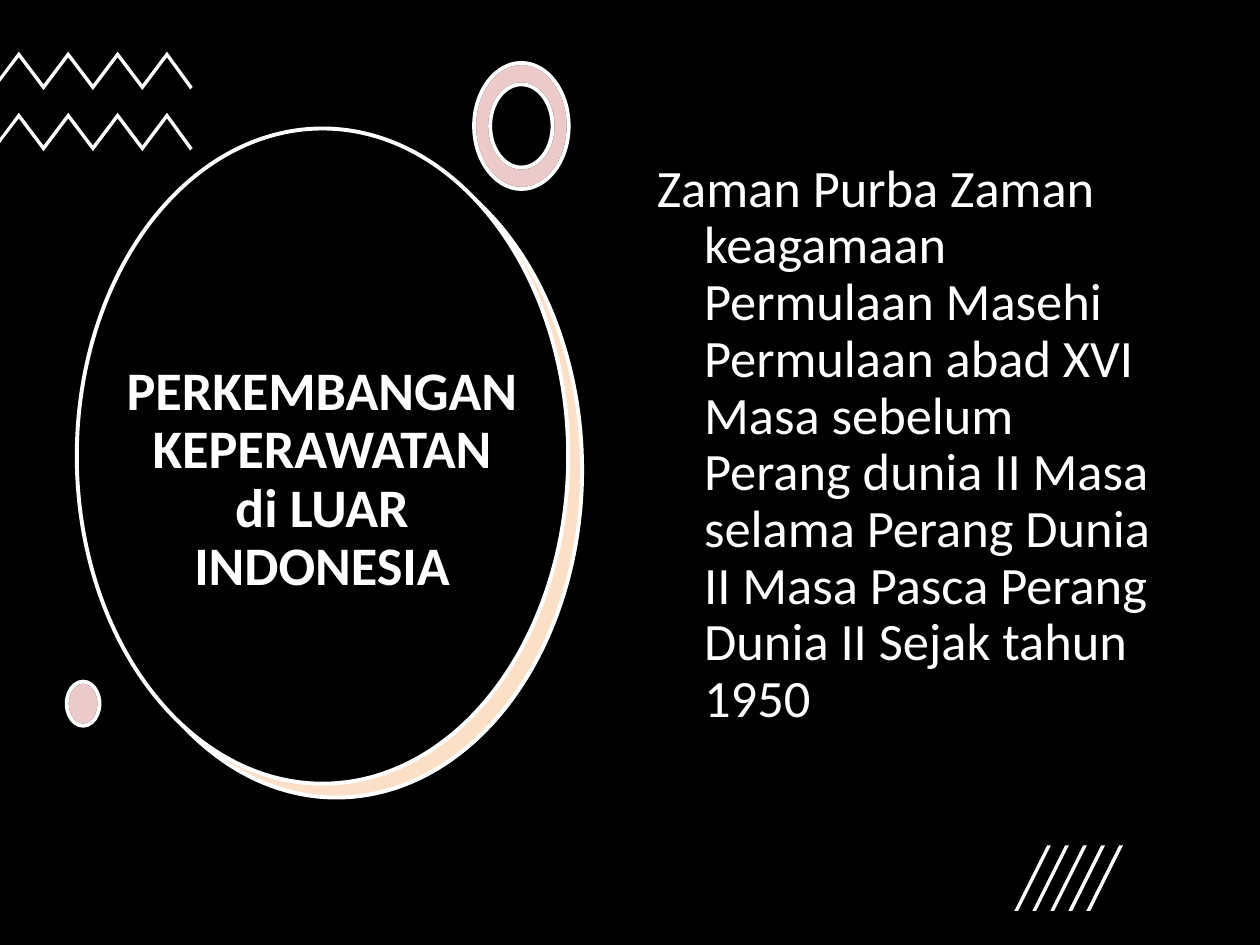
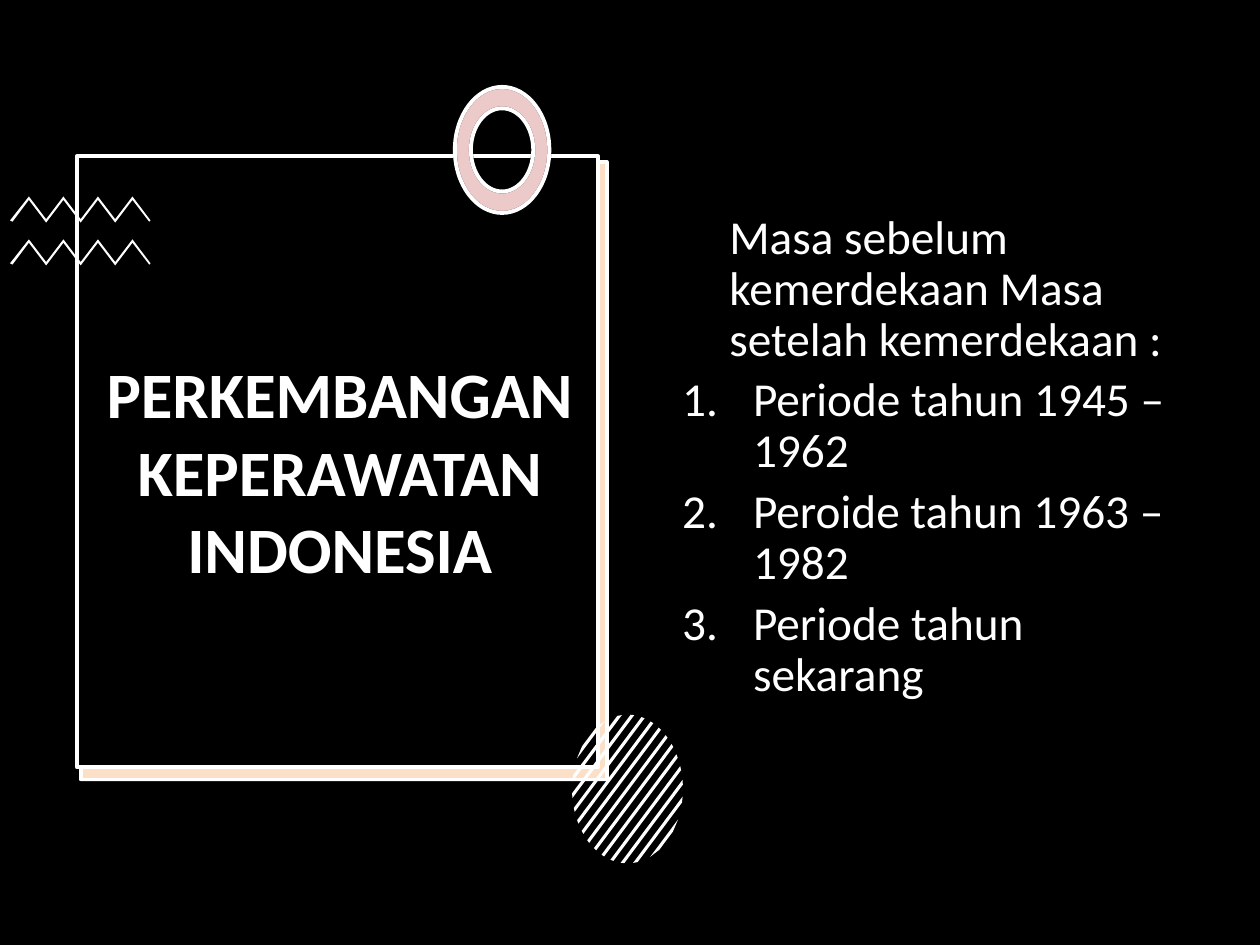
import math
from dataclasses import dataclass

import lxml.etree
import pptx
import pptx.dml.color
import pptx.enum.shapes
import pptx.enum.text
import pptx.oxml.ns
import pptx.util

WIDTH = pptx.util.Inches(10)
HEIGHT = pptx.util.Inches(7.5)
COLUMN = WIDTH / 100
ROW = HEIGHT / 75

BLACK = "000000"
WHITE = "FFFFFF"
ORANGE = "F79646"
RED = "C0504D"
TINT = 30
OUTLINE = 2.25
FONT = "Calibri"
CURVE = 0.55

OVAL = pptx.enum.shapes.MSO_SHAPE.OVAL
RECTANGLE = pptx.enum.shapes.MSO_SHAPE.RECTANGLE
CENTER = pptx.enum.text.PP_ALIGN.CENTER
LEFT = pptx.enum.text.PP_ALIGN.LEFT
TOP = pptx.enum.text.MSO_ANCHOR.TOP
MIDDLE = pptx.enum.text.MSO_ANCHOR.MIDDLE

Point = tuple[float, float]


@dataclass(frozen=True)
class Box:
    left: float
    top: float
    width: float
    height: float

    def lengths(self) -> tuple[int, int, int, int]:
        return (round(self.left * COLUMN), round(self.top * ROW),
                round(self.width * COLUMN), round(self.height * ROW))

    def locate(self, x: float, y: float) -> Point:
        return (self.left + self.width / 2 * (1 + x), self.top + self.height / 2 * (1 + y))

    def rim(self, angle: float) -> Point:
        return self.locate(math.cos(angle), math.sin(angle))

    def curve_points(self, scale: float) -> list[Point]:
        points = [(0, -1)]
        x, y = 0, -1
        for _ in range(4):
            next_x, next_y = y, -x
            points += [(x + CURVE * next_x, y + CURVE * next_y),
                       (next_x + CURVE * x, next_y + CURVE * y), (next_x, next_y)]
            x, y = next_x, next_y
        return [self.locate(scale * x, scale * y) for x, y in points]


@dataclass(frozen=True)
class Zigzag:
    first_peak: float
    step: float
    depth: float
    thickness: float
    start: tuple[Point, Point]
    end: tuple[Point, Point]
    tops: tuple[float, float]


@dataclass(frozen=True)
class Item:
    text: str
    indent: float = 0
    hanging: float = 0
    numbered: bool = False


def color(value: str) -> pptx.dml.color.RGBColor:
    return pptx.dml.color.RGBColor.from_string(value)


def paint(shape, fill: str, line: str | None = None, opacity: int = 100) -> None:
    shape.shadow.inherit = False
    shape.fill.solid()
    shape.fill.fore_color.rgb = color(fill)
    if opacity < 100:
        solid = shape.fill._xPr.find(pptx.oxml.ns.qn("a:solidFill"))
        lxml.etree.SubElement(solid[0], pptx.oxml.ns.qn("a:alpha"), val=str(opacity * 1000))
    if line is None:
        shape.line.fill.background()
    else:
        shape.line.color.rgb = color(line)
        shape.line.width = pptx.util.Pt(OUTLINE)


def add_preset(slide, kind, box: Box, fill: str, line: str | None = None, opacity: int = 100) -> None:
    paint(slide.shapes.add_shape(kind, *box.lengths()), fill, line, opacity)


def bend_lines(shape) -> None:
    lines = list(shape._element.iter(pptx.oxml.ns.qn("a:lnTo")))
    for first, second, last in zip(lines[::3], lines[1::3], lines[2::3]):
        curve = lxml.etree.Element(pptx.oxml.ns.qn("a:cubicBezTo"))
        first.addprevious(curve)
        for line in (first, second, last):
            curve.append(line[0])
            line.getparent().remove(line)


def add_outline(slide, contours: list[list[Point]], fill: str, line: str | None = None,
                opacity: int = 100, curved: bool = False) -> None:
    scaled = [[(round(x * COLUMN), round(y * ROW)) for x, y in contour] for contour in contours]
    builder = slide.shapes.build_freeform(*scaled[0][0], scale=1.0)
    for number, contour in enumerate(scaled):
        if number:
            builder.move_to(*contour[0])
        builder.add_line_segments(contour[1:], close=True)
    shape = builder.convert_to_shape()
    if curved:
        bend_lines(shape)
    paint(shape, fill, line, opacity)


def add_text(slide, box: Box, items: list[Item], *, size: float, bold: bool = False,
             align=LEFT, anchor=TOP, line_spacing: float = 1.0, space_before: float = 0,
             inset_top: float = 0.5) -> None:
    frame = slide.shapes.add_textbox(*box.lengths()).text_frame
    frame.word_wrap = True
    frame.vertical_anchor = anchor
    frame.margin_top = round(inset_top * ROW)
    for number, item in enumerate(items):
        paragraph = frame.add_paragraph() if number else frame.paragraphs[0]
        paragraph.alignment = align
        paragraph.line_spacing = line_spacing
        paragraph.space_before = pptx.util.Pt(space_before)
        properties = paragraph._p.get_or_add_pPr()
        properties.set("marL", str(round(item.indent * COLUMN)))
        properties.set("indent", str(round(-item.hanging * COLUMN)))
        if item.numbered:
            lxml.etree.SubElement(properties, pptx.oxml.ns.qn("a:buFont"), typeface="+mj-lt")
            lxml.etree.SubElement(properties, pptx.oxml.ns.qn("a:buAutoNum"), type="arabicPeriod")
        run = paragraph.add_run()
        run.text = item.text
        run.font.name = FONT
        run.font.size = pptx.util.Pt(size)
        run.font.bold = bold
        run.font.color.rgb = color(WHITE)


def add_panel(slide, kind, base: Box, tinted: Box, front: Box) -> None:
    add_preset(slide, kind, base, WHITE)
    add_preset(slide, kind, tinted, ORANGE, WHITE, TINT)
    add_preset(slide, kind, front, BLACK, WHITE)


def add_ring(slide, left: float, top: float) -> None:
    box = Box(left, top, 7.5, 10)
    contours = [box.curve_points(scale) for scale in (1, 0.66)]
    add_outline(slide, contours, WHITE, BLACK, curved=True)
    add_outline(slide, contours, RED, WHITE, TINT, curved=True)


def add_dot(slide, box: Box) -> None:
    add_preset(slide, OVAL, box, WHITE, BLACK)
    add_preset(slide, OVAL, box, RED, WHITE, TINT)


def add_zigzags(slide, zigzag: Zigzag) -> None:
    upper = [(zigzag.first_peak + turn * zigzag.step, turn % 2 * zigzag.depth)
             for turn in range(7)]
    lower = [(x, drop + zigzag.thickness) for x, drop in reversed(upper)]
    points = [zigzag.start[0], *upper, *zigzag.end, *lower, zigzag.start[1]]
    for top in zigzag.tops:
        add_outline(slide, [[(x, top + drop) for x, drop in points]], WHITE)


def add_slashes(slide) -> None:
    for number in range(5):
        left = 80.5 + number * 1.43
        add_outline(slide, [[(left + 0.3, 72.3), (left, 72.3),
                             (left + 2.6, 67.1), (left + 2.9, 67.1)]], WHITE)


def add_striped_oval(slide, box: Box) -> None:
    gap, half_width = 0.16, 0.025
    diagonal = math.pi / 4
    for number in range(-6, 7):
        near, far = (math.acos(number * gap + side * half_width) for side in (-1, 1))
        angles = (diagonal - near, diagonal - far, diagonal + far, diagonal + near)
        add_outline(slide, [[box.rim(angle) for angle in angles]], WHITE)


def add_black_slide(presentation):
    slide = presentation.slides.add_slide(presentation.slide_layouts[6])
    add_preset(slide, RECTANGLE, Box(0, 0, 100, 75), BLACK)
    return slide


def add_title(slide, box: Box, text: str, size: float, line_spacing: float) -> None:
    add_text(slide, box, [Item(text)], size=size, bold=True, align=CENTER,
             anchor=MIDDLE, line_spacing=line_spacing)


def add_body(slide, box: Box, items: list[Item], size: float, inset_top: float = 0.5) -> None:
    add_text(slide, box, items, size=size, line_spacing=0.9, space_before=size * 0.2,
             inset_top=inset_top)


def build_abroad(presentation) -> None:
    slide = add_black_slide(presentation)
    add_panel(slide, OVAL, Box(7.3, 11.4, 39, 52), Box(7.2, 11.3, 39, 52),
              Box(6.1, 10.2, 39, 52))
    add_title(slide, Box(9, 20.53, 33.1, 35.2),
              "PERKEMBANGAN KEPERAWATAN di LUAR INDONESIA", 31, 0.9)
    add_zigzags(slide, Zigzag(1.5, 1.96, 2.6, 0.45, ((0, 2), (0, 2.4)),
                              ((15.3, 2.8), (15.1, 3)), (4.1, 8.95)))
    add_ring(slide, 37.63, 5)
    add_dot(slide, Box(5.3, 54.1, 2.6, 3.5))
    add_body(slide, Box(51.15, 12.36, 42.8, 47.6), [Item(
        "Zaman Purba Zaman keagamaan Permulaan Masehi Permulaan abad XVI "
        "Masa sebelum Perang dunia II Masa selama Perang Dunia II "
        "Masa Pasca Perang Dunia II Sejak tahun 1950", 3.75, 3.75)], 30)
    add_slashes(slide)


def build_indonesia(presentation) -> None:
    slide = add_black_slide(presentation)
    add_panel(slide, RECTANGLE, Box(6.4, 13, 41.7, 49), Box(6.4, 12.87, 41.75, 49),
              Box(6.1, 12.4, 41.36, 48.5))
    add_zigzags(slide, Zigzag(2.3, 1.37, 1.8, 0.27, ((0.8, 1.9), (1, 2)),
                              ((11.95, 1.9), (11.85, 2)), (15.6, 19)))
    add_ring(slide, 36.1, 6.9)
    add_striped_oval(slide, Box(45.4, 56.72, 8.8, 11.8))
    add_title(slide, Box(6.86, 15.23, 40.2, 44.2),
              "PERKEMBANGAN KEPERAWATAN INDONESIA", 37, 1.0)
    periods = ("Periode tahun 1945 – 1962", "Peroide tahun 1963 – 1982",
               "Periode tahun sekarang")
    items = [Item("Masa sebelum kemerdekaan Masa setelah kemerdekaan :", 3.75)]
    items += [Item(period, 5.63, 5.63, True) for period in periods]
    add_body(slide, Box(53.15, 12.36, 40.8, 47.6), items, 27, 4.57)


def main() -> None:
    presentation = pptx.Presentation()
    presentation.slide_width = WIDTH
    presentation.slide_height = HEIGHT
    build_abroad(presentation)
    build_indonesia(presentation)
    presentation.save("out.pptx")


if __name__ == "__main__":
    main()
